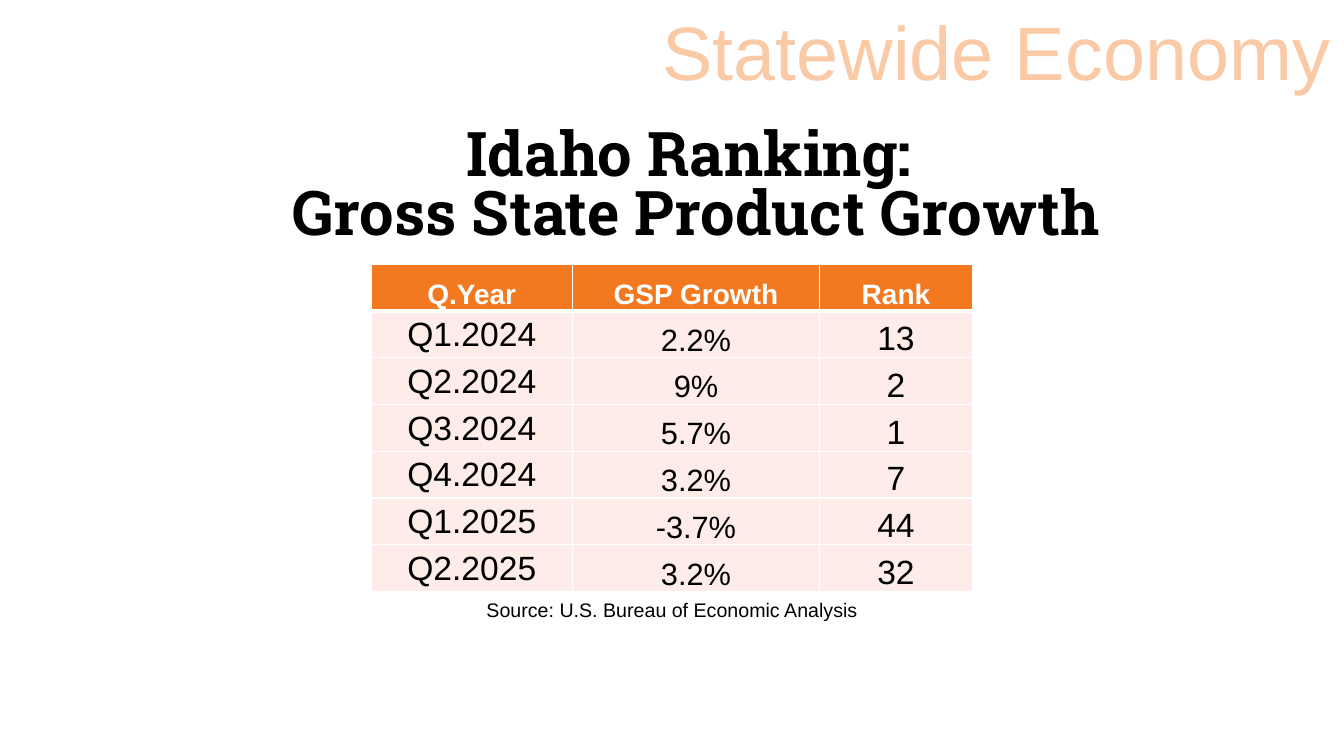
import pptx
import pptx.util
import pptx.dml.color
import pptx.enum.text
import pptx.oxml
import pptx.oxml.ns

Cm = pptx.util.Cm
Pt = pptx.util.Pt
RGBColor = pptx.dml.color.RGBColor
ALIGN = pptx.enum.text.PP_ALIGN
ANCHOR = pptx.enum.text.MSO_ANCHOR

BLACK = RGBColor(0x00, 0x00, 0x00)
WHITE = RGBColor(0xFF, 0xFF, 0xFF)
ORANGE = RGBColor(0xF3, 0x79, 0x20)
PEACH = RGBColor(0xFA, 0xC9, 0xA6)
BLUSH = RGBColor(0xFD, 0xEC, 0xE8)

HEADER = ("Q.Year", "GSP Growth", "Rank")
RANKINGS = [
    ("Q1.2024", "2.2%", "13"),
    ("Q2.2024", "9%", "2"),
    ("Q3.2024", "5.7%", "1"),
    ("Q4.2024", "3.2%", "7"),
    ("Q1.2025", "-3.7%", "44"),
    ("Q2.2025", "3.2%", "32"),
]
COL_WIDTHS = (5.08, 6.22, 3.86)
COL_SIZES = (24, 22, 24)
COL_ANCHORS = (ANCHOR.MIDDLE, ANCHOR.BOTTOM, ANCHOR.BOTTOM)
ROW_HEIGHT = 1.18


def apply(obj, values):
    for name, value in values.items():
        setattr(obj, name, value)


class RankingSlide:
    font = "Arial"

    def __init__(self, prs):
        self.slide = prs.slides.add_slide(prs.slide_layouts[6])

    def fill_text(self, tf, text, size, color, align=ALIGN.CENTER, bold=False,
                  font=None, spacing=None):
        p = tf.paragraphs[0]
        p.text = text
        apply(p, {"alignment": align, "line_spacing": spacing})
        for r in p.runs:
            apply(r.font, {"name": font or self.font, "size": Pt(size),
                           "bold": bold})
            r.font.color.rgb = color

    def text(self, box, text, size, color, frame, **style):
        sp = self.slide.shapes.add_textbox(*map(Cm, box))
        apply(sp.text_frame, frame)
        self.fill_text(sp.text_frame, text, size, color, **style)

    def border(self, cell, side, width):
        ns = pptx.oxml.ns.nsdecls("a")
        ln = pptx.oxml.parse_xml(
            f'<a:{side} {ns} w="{Pt(width)}"><a:solidFill>'
            f'<a:srgbClr val="{WHITE}"/></a:solidFill></a:{side}>')
        tcPr = cell._tc.get_or_add_tcPr()
        fill = tcPr.find(pptx.oxml.ns.qn("a:solidFill"))
        fill.addprevious(ln)

    def cell(self, cell, text, size, color, fill, anchor, inset, edges, bold):
        apply(cell, {"margin_left": inset, "margin_right": inset,
                     "margin_top": inset, "margin_bottom": 0,
                     "vertical_anchor": anchor})
        cell.fill.solid()
        cell.fill.fore_color.rgb = fill
        for side, width in zip(("lnL", "lnR", "lnT", "lnB"), edges):
            self.border(cell, side, width)
        self.fill_text(cell.text_frame, text, size, color, bold=bold)

    def table(self, left, top):
        rows = len(RANKINGS) + 1
        tbl = self.slide.shapes.add_table(
            rows, len(HEADER), Cm(left), Cm(top),
            Cm(sum(COL_WIDTHS)), Cm(rows * ROW_HEIGHT)).table
        for col, width in zip(tbl.columns, COL_WIDTHS):
            col.width = Cm(width)
        for row in tbl.rows:
            row.height = Cm(ROW_HEIGHT)
        for j, label in enumerate(HEADER):
            self.cell(tbl.cell(0, j), label, 20, WHITE, ORANGE,
                      ANCHOR.BOTTOM, 0, (1, 1, 1, 3), True)
        for i, ranking in enumerate(RANKINGS, 1):
            top_edge = 3 if i == 1 else 1
            for j, value in enumerate(ranking):
                self.cell(tbl.cell(i, j), value, COL_SIZES[j], BLACK, BLUSH,
                          COL_ANCHORS[j], Cm(0.03), (1, 1, top_edge, 1), False)


def main():
    prs = pptx.Presentation()
    apply(prs, {"slide_width": Cm(33.87), "slide_height": Cm(19.05)})
    s = RankingSlide(prs)

    # Title
    s.text((2.69, 3.0, 29.74, 3.43),
           "Idaho Ranking: \vGross State Product Growth", 44, BLACK,
           {"word_wrap": True, "margin_top": Cm(0.25)},
           bold=True, font="Roboto Slab", spacing=0.8)

    # Quarterly ranking table
    s.table(9.35, 6.65)

    # Section heading
    s.text((16.36, 0, 17.5, 2.57), "Statewide Economy", 54, PEACH,
           {"word_wrap": False})

    # Source line
    s.text((12.01, 14.94, 12.8, 0.86),
           "Source: U.S. Bureau of Economic Analysis", 14, BLACK,
           {"word_wrap": True}, align=ALIGN.LEFT)

    prs.save("out.pptx")


if __name__ == "__main__":
    main()
